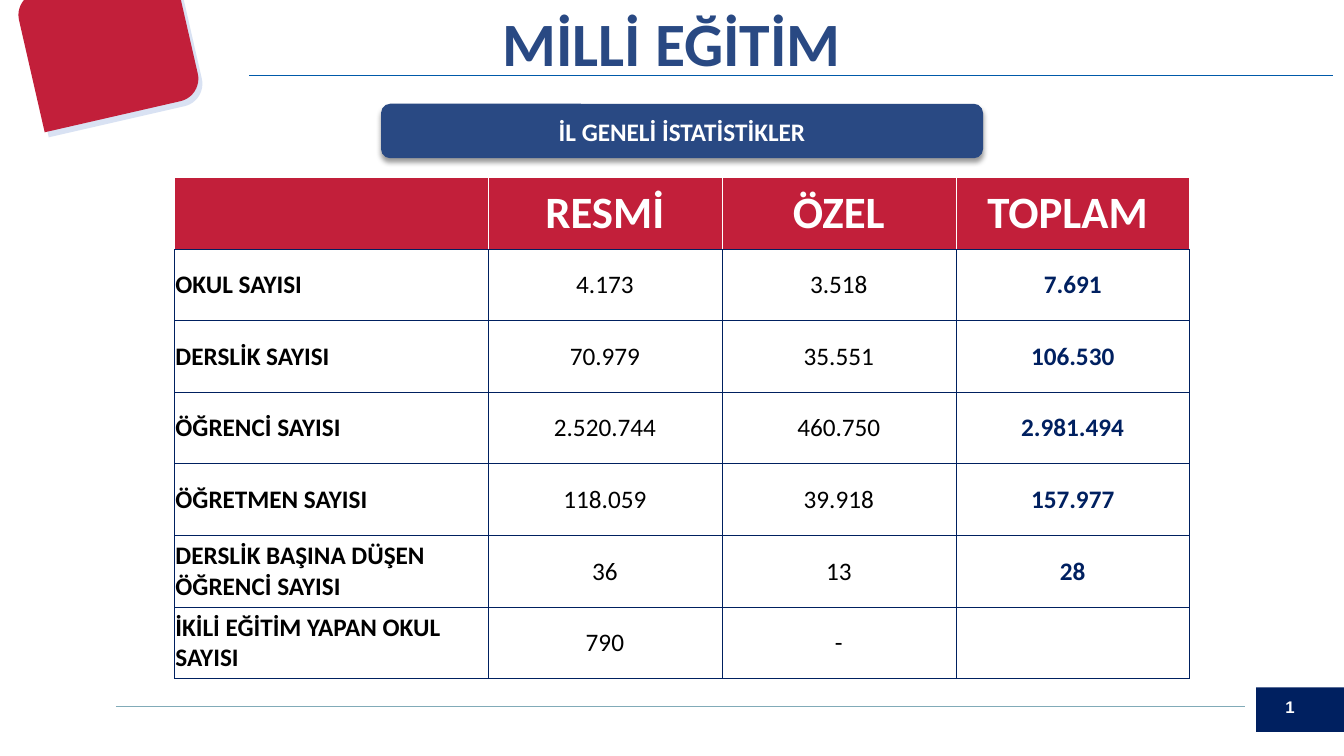
from dataclasses import dataclass
from typing import Optional

from lxml.etree import SubElement
from pptx import Presentation
from pptx.dml.color import RGBColor
from pptx.enum.shapes import MSO_CONNECTOR as Connector, MSO_SHAPE as Preset
from pptx.enum.text import MSO_ANCHOR as Anchor, MSO_AUTO_SIZE as AutoSize, PP_ALIGN as Align
from pptx.oxml.ns import qn
from pptx.util import Inches, Pt


@dataclass(frozen=True)
class Theme:
    navy: str = "002060"
    blue: str = "294983"
    red: str = "C21F3A"
    white: str = "FFFFFF"
    black: str = "000000"
    halo: str = "4472C4"
    title_rule: str = "005AAA"
    footer_rule: str = "81ABB8"
    font: str = "Calibri"
    number_font: str = "Arial"
    title: float = 44
    heading: float = 32
    body: float = 18
    number: float = 12
    border: float = 0.25


THEME = Theme()


@dataclass(frozen=True)
class TextStyle:
    size: float
    color: str
    bold: bool = True
    align: Align = Align.CENTER
    font: str = THEME.font


@dataclass(frozen=True)
class Block:
    preset: Preset
    left: float
    top: float
    width: float
    height: float
    fill: str
    rotation: float = 0
    opacity: Optional[int] = None


@dataclass(frozen=True)
class Rule:
    left: float
    right: float
    top: float
    color: str
    weight: float


RULES = [
    Rule(1.15, 12.35, 7.01, THEME.footer_rule, 0.75),
    Rule(2.47, 13.22, 0.75, THEME.title_rule, 1),
]
BLOCKS = [
    Block(Preset.RECTANGLE, 12.46, 6.82, 0.87, 0.44, THEME.navy),
    Block(Preset.ROUND_2_DIAG_RECTANGLE, 0.31, -0.17, 1.61, 1.37, THEME.halo, 347.1, 20),
    Block(Preset.ROUND_2_DIAG_RECTANGLE, 0.27, -0.22, 1.61, 1.37, THEME.red, 347.1),
]
BANNER = Block(Preset.ROUNDED_RECTANGLE, 3.78, 1.03, 5.97, 0.54, THEME.blue)

HEADING = TextStyle(THEME.heading, THEME.white)
LABEL = TextStyle(THEME.body, THEME.black, align=Align.LEFT)
VALUE = TextStyle(THEME.body, THEME.black, bold=False)
TOTAL = TextStyle(THEME.body, THEME.navy)
COLUMN_STYLES = [LABEL, VALUE, VALUE, TOTAL]
COLUMN_WIDTHS = [3.11, 2.32, 2.32, 2.32]
ROW_HEIGHT = 0.71
STATISTICS = [
    ["", "RESMİ", "ÖZEL", "TOPLAM "],
    ["OKUL SAYISI", "4.173", "3.518", "7.691"],
    ["DERSLİK SAYISI", "70.979", "35.551", "106.530"],
    ["ÖĞRENCİ SAYISI", "2.520.744", "460.750", "2.981.494"],
    ["ÖĞRETMEN SAYISI", "118.059", "39.918", "157.977"],
    ["DERSLİK BAŞINA DÜŞEN ÖĞRENCİ SAYISI", "36", "13", "28"],
    ["İKİLİ EĞİTİM YAPAN OKUL SAYISI", "790", "-", ""],
]


def rgb(color: str) -> RGBColor:
    return RGBColor.from_string(color)


def write(frame, text: str, style: TextStyle) -> None:
    frame.text = text
    para = frame.paragraphs[0]
    para.alignment = style.align
    for span in para.runs:
        span.font.name = style.font
        span.font.size = Pt(style.size)
        span.font.bold = style.bold
        span.font.color.rgb = rgb(style.color)


def draw_rule(page, rule: Rule) -> None:
    line = page.shapes.add_connector(
        Connector.STRAIGHT, Inches(rule.left), Inches(rule.top), Inches(rule.right), Inches(rule.top)
    )
    line.line.color.rgb = rgb(rule.color)
    line.line.width = Pt(rule.weight)
    SubElement(line._element.spPr, qn("a:effectLst"))


def draw_block(page, block: Block):
    shape = page.shapes.add_shape(
        block.preset, Inches(block.left), Inches(block.top), Inches(block.width), Inches(block.height)
    )
    shape.shadow.inherit = False
    shape.rotation = block.rotation
    shape.fill.solid()
    shape.fill.fore_color.rgb = rgb(block.fill)
    shape.line.fill.background()
    if block.opacity is not None:
        color = shape._element.spPr.find(f"{qn('a:solidFill')}/{qn('a:srgbClr')}")
        SubElement(color, qn("a:alpha"), val=str(block.opacity * 1000))
    return shape


def draw_banner(page, text: str) -> None:
    banner = draw_block(page, BANNER)
    banner.text_frame.vertical_anchor = Anchor.MIDDLE
    write(banner.text_frame, text, TextStyle(THEME.body, THEME.white))
    effects = banner._element.spPr.find(qn("a:effectLst"))
    shadow = SubElement(
        effects, qn("a:outerShdw"), blurRad=str(Pt(4)), dist=str(Pt(3)), dir="5400000", rotWithShape="0"
    )
    color = SubElement(shadow, qn("a:srgbClr"), val=THEME.black)
    SubElement(color, qn("a:alpha"), val="40000")


def draw_text(page, left: float, top: float, width: float, height: float, text: str, style: TextStyle) -> None:
    box = page.shapes.add_textbox(Inches(left), Inches(top), Inches(width), Inches(height))
    box.text_frame.word_wrap = True
    box.text_frame.auto_size = AutoSize.SHAPE_TO_FIT_TEXT
    write(box.text_frame, text, style)


def draw_borders(cell, side_color: str) -> None:
    properties = cell._tc.get_or_add_tcPr()
    colors = {"L": side_color, "R": side_color, "T": side_color, "B": THEME.navy}
    for side, color in colors.items():
        border = SubElement(properties, qn(f"a:ln{side}"), w=str(Pt(THEME.border)))
        fill = SubElement(border, qn("a:solidFill"))
        SubElement(fill, qn("a:srgbClr"), val=color)


def draw_statistics(page, left: float, top: float) -> None:
    rows, columns = len(STATISTICS), len(COLUMN_WIDTHS)
    table = page.shapes.add_table(
        rows, columns, Inches(left), Inches(top), Inches(sum(COLUMN_WIDTHS)), Inches(ROW_HEIGHT * rows)
    ).table
    table.horz_banding = False
    for column, width in zip(table.columns, COLUMN_WIDTHS):
        column.width = Inches(width)
    for row_index, texts in enumerate(STATISTICS):
        table.rows[row_index].height = Inches(ROW_HEIGHT)
        is_header = row_index == 0
        for column_index, text in enumerate(texts):
            cell = table.cell(row_index, column_index)
            draw_borders(cell, THEME.white if is_header else THEME.navy)
            cell.fill.solid()
            cell.fill.fore_color.rgb = rgb(THEME.red if is_header else THEME.white)
            cell.vertical_anchor = Anchor.MIDDLE
            cell.margin_left = cell.margin_right = cell.margin_top = Inches(0.01)
            cell.margin_bottom = 0
            write(cell.text_frame, text, HEADING if is_header else COLUMN_STYLES[column_index])


def main() -> None:
    deck = Presentation()
    deck.slide_width, deck.slide_height = Inches(13.33), Inches(7.5)
    page = deck.slides.add_slide(deck.slide_layouts[6])
    for rule in RULES:
        draw_rule(page, rule)
    for block in BLOCKS:
        draw_block(page, block)
    number = TextStyle(THEME.number, THEME.white, align=Align.LEFT, font=THEME.number_font)
    draw_text(page, 12.65, 6.86, 0.99, 0.3, "1", number)
    draw_text(page, 1.3, 0, 10.73, 0.84, "MİLLİ EĞİTİM", TextStyle(THEME.title, THEME.blue))
    draw_statistics(page, 1.73, 1.76)
    draw_banner(page, "İL GENELİ İSTATİSTİKLER")
    deck.save("out.pptx")


if __name__ == "__main__":
    main()
